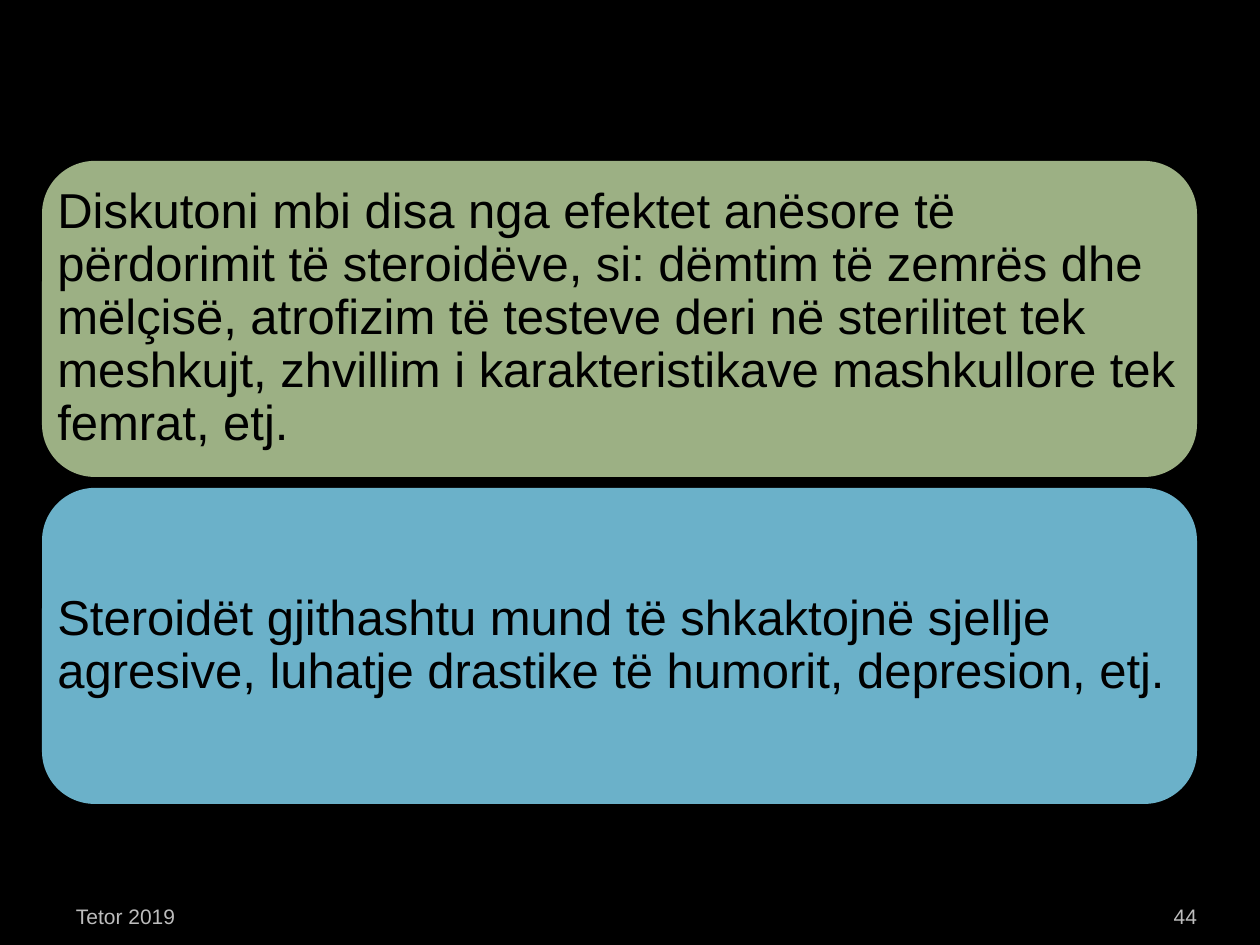
from pptx import Presentation
from pptx.dml.color import RGBColor
from pptx.enum.shapes import MSO_SHAPE
from pptx.enum.text import MSO_ANCHOR, PP_ALIGN
from pptx.util import Pt

ROUND = MSO_SHAPE.ROUNDED_RECTANGLE
MIDDLE, BOTTOM = MSO_ANCHOR.MIDDLE, MSO_ANCHOR.BOTTOM
LEFT, RIGHT = PP_ALIGN.LEFT, PP_ALIGN.RIGHT

BLACK = RGBColor(0x00, 0x00, 0x00)
GREEN = RGBColor(0x9C, 0xB0, 0x84)
BLUE = RGBColor(0x6B, 0xB1, 0xC9)
GREY = RGBColor(0xBD, 0xBD, 0xBD)

PX = 914400 // 126

PANELS = [
    ("Diskutoni mbi disa nga efektet anësore të përdorimit të steroidëve, "
     "si: dëmtim të zemrës dhe mëlçisë, atrofizim të testeve deri në "
     "sterilitet tek meshkujt, zhvillim i karakteristikave mashkullore tek "
     "femrat, etj.", GREEN),
    ("Steroidët gjithashtu mund të shkaktojnë sjellje agresive, luhatje "
     "drastike të humorit, depresion, etj.", BLUE),
]
# text, left, width, side inset, alignment
FOOTERS = [
    ("Tetor 2019", 63, 294, 13, LEFT),
    ("44", 1092, 105, 0, RIGHT),
]
PANEL_X, PANEL_Y, PANEL_W, PANEL_H, GAP = 42, 161, 1155, 316, 11
FOOT_Y, FOOT_H = 885, 50


def place(*box):
    return [n * PX for n in box]


def write(shape, text, size, color, align, anchor, side, edge):
    """Fill a shape with one paragraph; side and edge are insets in px."""
    frame = shape.text_frame
    frame.word_wrap = True
    frame.vertical_anchor = anchor
    frame.margin_left = frame.margin_right = side * PX
    frame.margin_top = frame.margin_bottom = edge * PX
    para = frame.paragraphs[0]
    para.text = text
    para.alignment = align
    para.font.name = "Arial"
    para.font.size = Pt(size)
    para.font.color.rgb = color
    return para


def main():
    deck = Presentation()
    deck.slide_width, deck.slide_height = place(1260, 945)
    slide = deck.slides.add_slide(deck.slide_layouts[6])
    slide.background.fill.solid()
    slide.background.fill.fore_color.rgb = BLACK

    for text, left, width, side, align in FOOTERS:
        box = slide.shapes.add_textbox(*place(left, FOOT_Y, width, FOOT_H))
        write(box, text, 12, GREY, align, BOTTOM, side, 6)

    for i, (text, color) in enumerate(PANELS):
        top = PANEL_Y + i * (PANEL_H + GAP)
        panel = slide.shapes.add_shape(
            ROUND, *place(PANEL_X, top, PANEL_W, PANEL_H))
        panel.shadow.inherit = False
        panel.fill.solid()
        panel.fill.fore_color.rgb = color
        panel.line.fill.background()
        # The round corners already hold the text off the edges.
        para = write(panel, text, 28, BLACK, LEFT, MIDDLE, 0, 0)
        para.line_spacing = 0.9

    deck.save("out.pptx")


if __name__ == "__main__":
    main()
